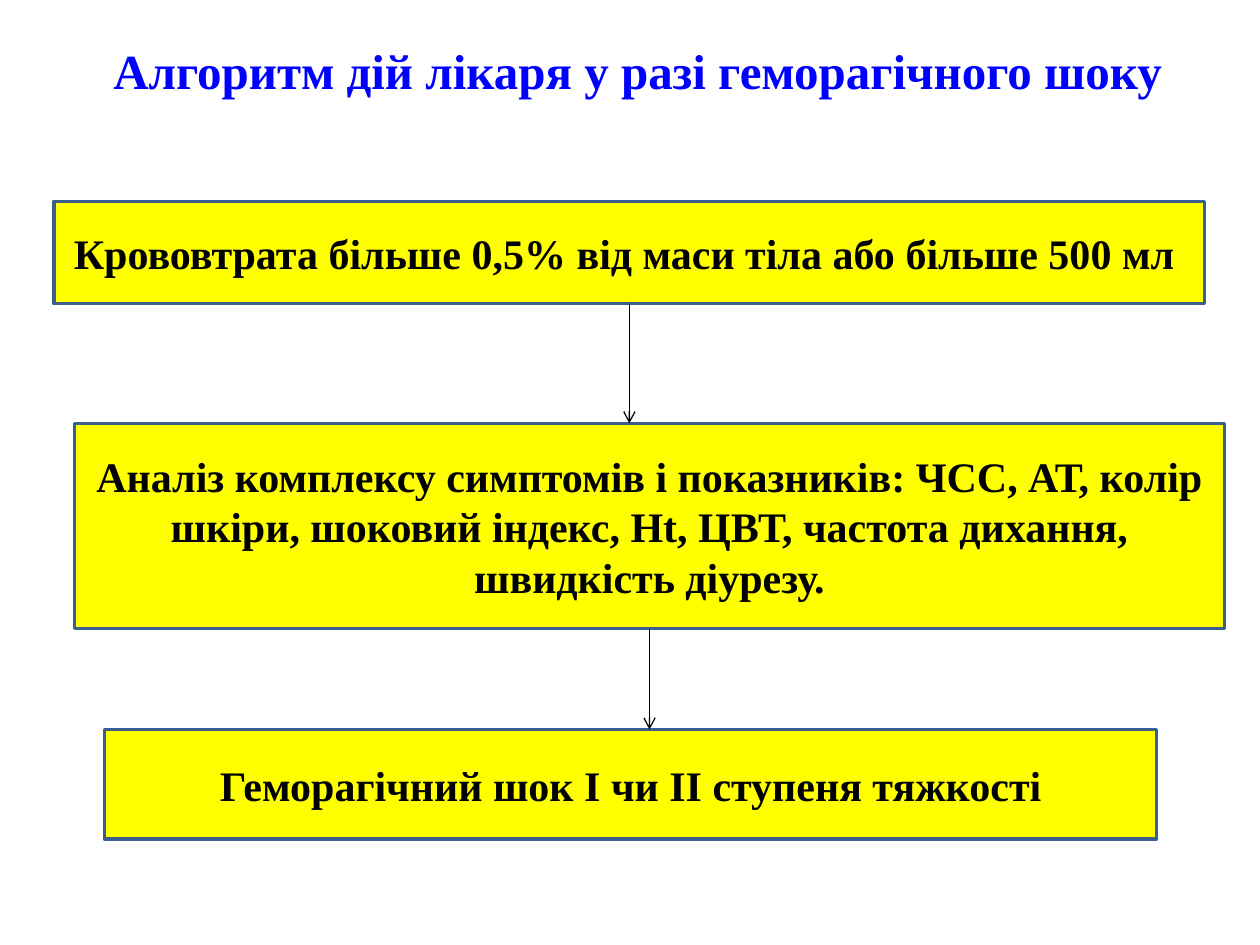
from lxml import etree
from pptx import Presentation
from pptx.dml.color import RGBColor
from pptx.enum import shapes, text
from pptx.oxml.ns import qn
from pptx.util import Inches, Pt

FONT = "Times New Roman"
STEPS = [
    ((0.43, 1.6, 9.13, 0.81),
     "Крововтрата більше 0,5% від маси тіла або більше 500 мл "),
    ((0.59, 3.36, 9.13, 1.63),
     "Аналіз комплексу симптомів і показників: ЧСС, АТ, колір шкіри, "
     "шоковий індекс, Ht, ЦВТ, частота дихання, швидкість діурезу."),
    ((0.83, 5.79, 8.35, 0.87),
     "Геморагічний шок І чи ІІ ступеня тяжкості"),
]


def color(value):
    return RGBColor.from_string(value)


def write(sp, content, size, font_color):
    tf = sp.text_frame
    tf.text = content
    tf.word_wrap = True
    tf.vertical_anchor = text.MSO_ANCHOR.MIDDLE
    p = tf.paragraphs[0]
    p.alignment = text.PP_ALIGN.CENTER
    font = p.runs[0].font
    font.name, font.size, font.bold = FONT, Pt(size), True
    font.color.rgb = color(font_color)


def set_title(s, content):
    sp = s.shapes.title
    sp.left, sp.top, sp.width, sp.height = map(Inches, (0.12, 0.27, 9.88, 0.57))
    write(sp, content, 28, "0000FF")
    sp.text_frame.auto_size = text.MSO_AUTO_SIZE.SHAPE_TO_FIT_TEXT


def add_step(s, box, content):
    sp = s.shapes.add_shape(shapes.MSO_SHAPE.FLOWCHART_PROCESS, *map(Inches, box))
    sp.shadow.inherit = False
    sp.fill.solid()
    sp.fill.fore_color.rgb = color("FFFF00")
    sp.line.color.rgb = color("3A5F8C")
    sp.line.width = Pt(2)
    write(sp, content, 24, "000000")
    return sp


def add_arrow(s, upper, lower):
    """Drop straight down from the upper step's centre to the lower step's top."""
    x = upper.left + upper.width // 2
    cxn = s.shapes.add_connector(shapes.MSO_CONNECTOR.STRAIGHT,
                                 x, upper.top + upper.height, x, lower.top)
    cxn.begin_connect(upper, 2)
    cxn.line.color.rgb = color("000000")
    cxn.line.width = Pt(0.75)
    etree.SubElement(cxn.line._get_or_add_ln(), qn("a:tailEnd"), type="arrow")
    etree.SubElement(cxn._element.spPr, qn("a:effectLst"))


def main():
    prs = Presentation()
    prs.slide_width, prs.slide_height = Inches(10), Inches(7.5)
    s = prs.slides.add_slide(prs.slide_layouts[5])
    set_title(s, "Алгоритм дій лікаря у разі геморагічного шоку")
    steps = [add_step(s, box, content) for box, content in STEPS]
    for upper, lower in zip(steps, steps[1:]):
        add_arrow(s, upper, lower)
    prs.save("out.pptx")


if __name__ == "__main__":
    main()
